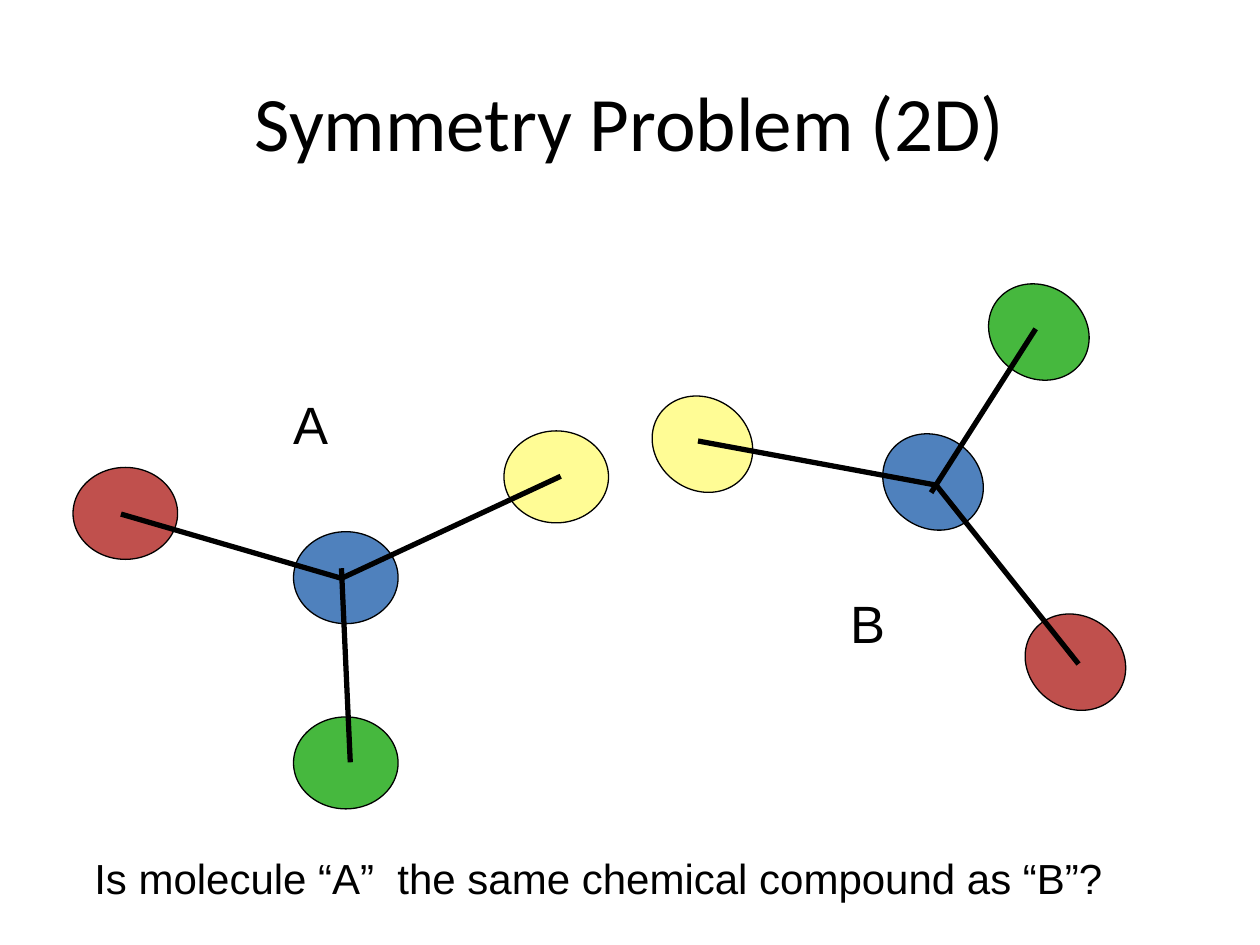
from lxml import etree
from pptx import Presentation
from pptx.dml.color import RGBColor
from pptx.enum.shapes import MSO_CONNECTOR, MSO_SHAPE
from pptx.enum.text import MSO_ANCHOR, PP_ALIGN
from pptx.oxml.ns import qn
from pptx.util import Pt

EMU_PER_PX = 9144
BLACK = RGBColor(0x00, 0x00, 0x00)
BLUE = RGBColor(0x4F, 0x81, 0xBD)
RED = RGBColor(0xC0, 0x50, 0x4D)
GREEN = RGBColor(0x46, 0xB8, 0x3E)
YELLOW = RGBColor(0xFF, 0xFC, 0x95)
OVAL = MSO_SHAPE.OVAL
STRAIGHT = MSO_CONNECTOR.STRAIGHT
LEFT, CENTER = PP_ALIGN.LEFT, PP_ALIGN.CENTER
TOP, MIDDLE = MSO_ANCHOR.TOP, MSO_ANCHOR.MIDDLE

ATOM_SIZE = (83, 73)
MOLECULES = [
    {
        "rotation": 0,
        "atoms": [(233, 422, BLUE), (58, 371, RED),
                  (233, 569, GREEN), (400, 342, YELLOW)],
        "bonds": [(96, 408, 271, 459), (445, 378, 271, 459),
                  (271, 451, 278, 605)],
    },
    {
        "rotation": 215.2,
        "atoms": [(699, 346, BLUE), (812, 489, RED),
                  (783, 227, GREEN), (516, 316, YELLOW)],
        "bonds": [(856, 527, 743, 385), (554, 350, 743, 385),
                  (739, 391, 822, 261)],
    },
]
LABELS = [
    ("A", (223, 306, 48, 60), 30),
    ("B", (665, 464, 48, 60), 30),
    ("Is molecule “A”  the same chemical compound as “B”?",
     (65, 672, 830, 50), 24),
]


def px(*lengths):
    return [length * EMU_PER_PX for length in lengths]


class SlideBuilder:
    outline_width = Pt(0.75)
    bond_width = Pt(3)

    def __init__(self, slide):
        self.slide = slide

    def text(self, wording, box, size, font="Arial", align=LEFT,
             anchor=TOP, wrap=False):
        frame = self.slide.shapes.add_textbox(*px(*box)).text_frame
        frame.word_wrap = wrap
        frame.vertical_anchor = anchor
        paragraph = frame.paragraphs[0]
        paragraph.alignment = align
        run = paragraph.add_run()
        run.text = wording
        run.font.color.rgb = BLACK
        for name, value in {"name": font, "size": Pt(size)}.items():
            setattr(run.font, name, value)

    def outline(self, shape, width):
        shape.line.color.rgb = BLACK
        shape.line.width = width

    def atom(self, group, left, top, color, rotation):
        shape = group.shapes.add_shape(OVAL, *px(left, top, *ATOM_SIZE))
        shape.shadow.inherit = False
        shape.rotation = rotation
        shape.fill.solid()
        shape.fill.fore_color.rgb = color
        self.outline(shape, self.outline_width)

    def bond(self, group, ends):
        connector = group.shapes.add_connector(STRAIGHT, *px(*ends))
        self.outline(connector, self.bond_width)
        etree.SubElement(connector._element.spPr, qn("a:effectLst"))

    def molecule(self, rotation, atoms, bonds):
        group = self.slide.shapes.add_group_shape()
        for left, top, color in atoms:
            self.atom(group, left, top, color, rotation)
        for ends in bonds:
            self.bond(group, ends)


def main():
    presentation = Presentation()
    presentation.slide_width, presentation.slide_height = px(1000, 750)
    blank_layout = presentation.slide_layouts[6]
    builder = SlideBuilder(presentation.slides.add_slide(blank_layout))
    builder.text("Symmetry Problem (2D)", (50, 33, 900, 125), 44,
                 font="Calibri", align=CENTER, anchor=MIDDLE, wrap=True)
    for molecule in MOLECULES:
        builder.molecule(**molecule)
    for label in LABELS:
        builder.text(*label)
    presentation.save("out.pptx")


if __name__ == "__main__":
    main()
